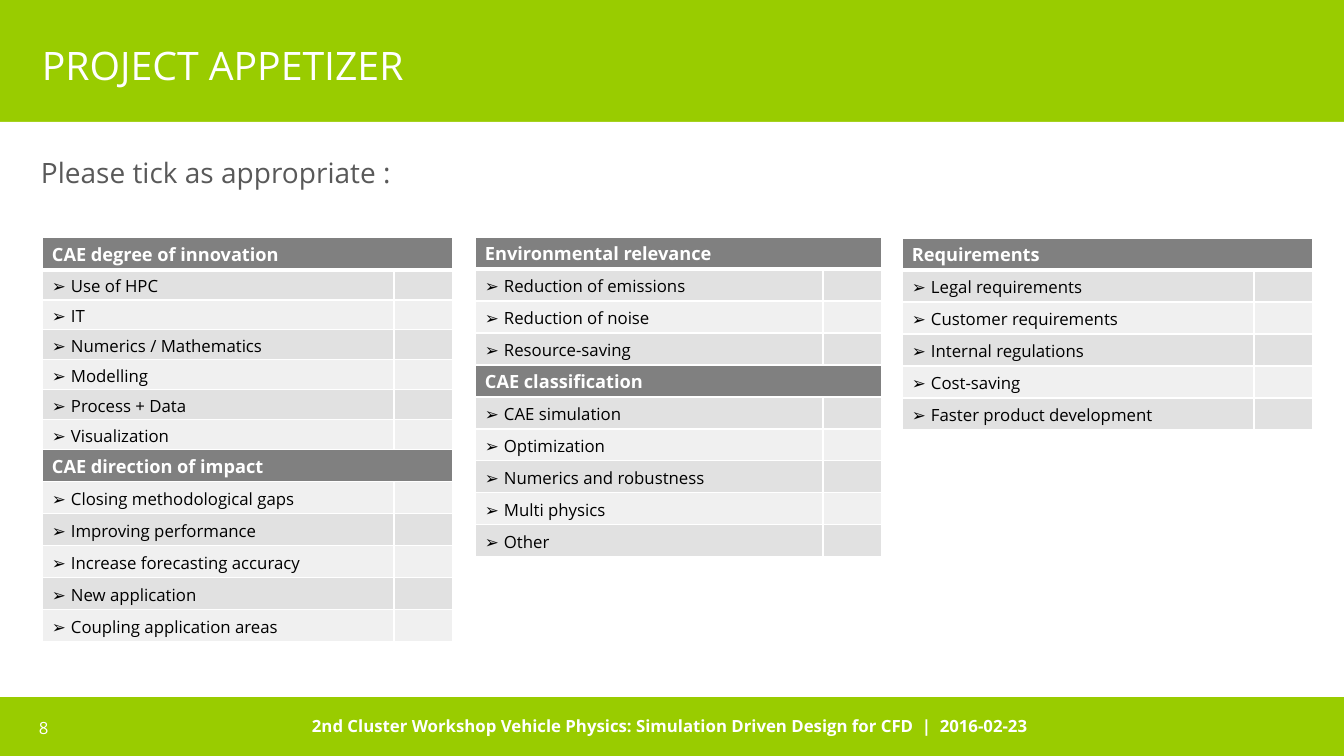
from lxml.etree import SubElement
from pptx import Presentation
from pptx.dml.color import RGBColor
from pptx.enum.shapes import MSO_SHAPE as Shape
from pptx.enum.text import MSO_ANCHOR as Anchor
from pptx.oxml.ns import qn
from pptx.util import Emu, Pt

EMU_PER_PX = 914400 / 100.8
GREEN, WHITE, BLACK = "99CC00", "FFFFFF", "000000"
HEADING_GREY, PROMPT_GREY = "808080", "595959"
BANDS = ("F0F0F0", "E1E1E1")


def px(length):
    return Emu(round(length * EMU_PER_PX))


def color(hex_code):
    return RGBColor.from_string(hex_code)


class SlideBuilder:
    font_name = "Open Sans"
    bullet_indent = 19

    def __init__(self, slide):
        self.slide = slide

    def style(self, paragraph, size, ink, bold=False):
        font = paragraph.font
        font.name, font.size, font.bold = self.font_name, Pt(size), bold
        font.color.rgb = color(ink)

    def panel(self, x, y, w, h, fill):
        panel = self.slide.shapes.add_shape(Shape.RECTANGLE, px(x), px(y), px(w), px(h))
        panel.shadow.inherit = False
        panel.fill.solid()
        panel.fill.fore_color.rgb = color(fill)
        panel.line.fill.background()

    def text(self, x, y, w, h, words, size, ink=WHITE, bold=False):
        frame = self.slide.shapes.add_textbox(px(x), px(y), px(w), px(h)).text_frame
        frame.word_wrap = True
        frame.text = words
        self.style(frame.paragraphs[0], size, ink, bold)

    def bullet(self, paragraph):
        props = paragraph._p.get_or_add_pPr()
        props.set("marL", str(px(self.bullet_indent)))
        props.set("indent", str(-px(self.bullet_indent)))
        SubElement(props, qn("a:buFont"), typeface=self.font_name)
        SubElement(props, qn("a:buChar"), char="➢")

    def cell(self, cell, fill, top=1, bottom=1):
        props = cell._tc.get_or_add_tcPr()
        for side, points in (("L", 1), ("R", 1), ("T", top), ("B", bottom)):
            line = SubElement(props, qn(f"a:ln{side}"), w=str(Pt(points)))
            solid = SubElement(line, qn("a:solidFill"))
            SubElement(solid, qn("a:srgbClr"), val=WHITE)
        cell.fill.solid()
        cell.fill.fore_color.rgb = color(fill)
        cell.margin_top, cell.margin_bottom = px(4), px(2)
        cell.margin_left = cell.margin_right = px(10)
        cell.vertical_anchor = Anchor.MIDDLE

    def checklist(self, x, y, label_width, sections):
        """Each section is (heading, heading height, item height, items)."""
        rows = []
        for heading, heading_height, item_height, items in sections:
            rows.append((heading, heading_height, True))
            rows += [(item, item_height, False) for item in items]
        widths = (label_width, 59)
        total = sum(height for _, height, _ in rows)
        table = self.slide.shapes.add_table(
            len(rows), 2, px(x), px(y), px(sum(widths)), px(total)).table
        for column, width in zip(table.columns, widths):
            column.width = px(width)

        for index, (words, height, is_heading) in enumerate(rows):
            table.rows[index].height = px(height)
            label, tick = table.cell(index, 0), table.cell(index, 1)
            fill = HEADING_GREY if is_heading else BANDS[index % 2]
            for cell in (label, tick):
                self.cell(cell, fill, 3 if index == 1 else 1, 3 if index == 0 else 1)
            label.text = words
            paragraph = label.text_frame.paragraphs[0]
            if is_heading:
                label.merge(tick)
                self.style(paragraph, 13, WHITE, True)
            else:
                self.bullet(paragraph)
                self.style(paragraph, 12, BLACK)
            # Keep the empty tick cell from stretching its row
            tick_text = tick.text_frame.paragraphs[0]
            tick_text._p.get_or_add_endParaRPr().set("sz", "1200")


def main():
    deck = Presentation()
    deck.slide_width, deck.slide_height = px(1344), px(756)
    page = SlideBuilder(deck.slides.add_slide(deck.slide_layouts[6]))

    # Green frame with white body
    page.panel(0, 0, 1344, 756, GREEN)
    page.panel(0, 122, 1344, 575, WHITE)

    # Title, prompt and footer
    page.text(32, 36, 420, 57, "PROJECT APPETIZER", 28)
    page.text(31, 151, 420, 44, "Please tick as appropriate :", 20, PROMPT_GREY)
    page.text(29, 713, 127, 30, "8", 12)
    page.text(302, 711, 760, 30,
              "2nd Cluster Workshop Vehicle Physics: Simulation Driven Design for CFD  |  2016-02-23",
              12, bold=True)

    # Checklists
    page.checklist(42, 237, 352, [
        ("CAE degree of innovation", 33, 30,
         ["Use of HPC", "IT", "Numerics / Mathematics", "Modelling",
          "Process + Data", "Visualization"]),
        ("CAE direction of impact", 32, 32,
         ["Closing methodological gaps", "Improving performance",
          "Increase forecasting accuracy", "New application",
          "Coupling application areas"]),
    ])
    page.checklist(475, 237, 348, [
        ("Environmental relevance", 32, 32,
         ["Reduction of emissions", "Reduction of noise", "Resource-saving"]),
        ("CAE classification", 32, 32,
         ["CAE simulation", "Optimization", "Numerics and robustness",
          "Multi physics", "Other"]),
    ])
    page.checklist(902, 238, 352, [
        ("Requirements", 32, 32,
         ["Legal requirements", "Customer requirements", "Internal regulations",
          "Cost-saving", "Faster product development"]),
    ])

    deck.save("out.pptx")


if __name__ == "__main__":
    main()
